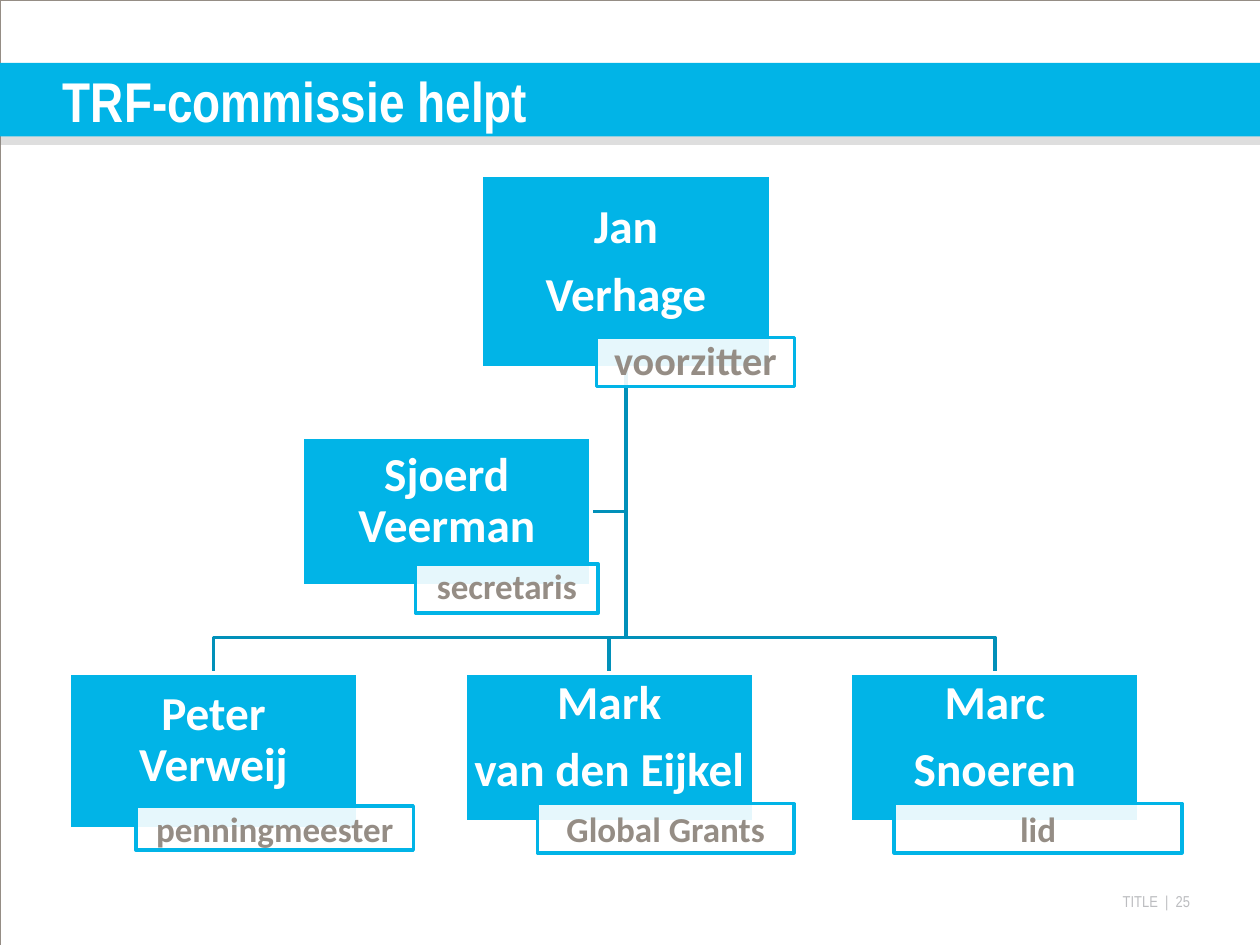
from dataclasses import dataclass

from lxml.etree import SubElement
from pptx import Presentation
from pptx.dml.color import RGBColor
from pptx.enum.shapes import MSO_SHAPE
from pptx.enum.text import MSO_ANCHOR, PP_ALIGN
from pptx.oxml.ns import qn
from pptx.util import Pt


@dataclass(frozen=True)
class Theme:
    blue: str = "01B4E7"
    dark_blue: str = "0190B9"
    taupe: str = "958D85"
    white: str = "FFFFFF"
    shadow: str = "808080"
    footer: str = "BCBDC0"
    heading_font: str = "Arial Narrow"
    body_font: str = "Calibri"
    title_size: float = 32
    name_size: float = 27
    chair_role_size: float = 23
    role_size: float = 20
    footer_size: float = 9
    line_width: float = 2


@dataclass(frozen=True)
class Member:
    name: str  # a new line starts a paragraph, \v breaks a line
    role: str
    name_box: tuple  # left, top, width, height
    role_box: tuple
    role_size: float = Theme.role_size
    role_spacing: float = 1.0

    @property
    def center(self):
        left, top, width, height = self.name_box
        return left + width / 2, top + height / 2


def write_text(shape, text, *, font, size, color, bold=False, align=PP_ALIGN.LEFT,
               anchor=MSO_ANCHOR.MIDDLE, insets=(0, 0, 0, 0), spacing=1.0, gap=0):
    frame = shape.text_frame
    frame.word_wrap = True
    frame.vertical_anchor = anchor
    frame.margin_left, frame.margin_top, frame.margin_right, frame.margin_bottom = map(Pt, insets)
    frame.text = text
    for para in frame.paragraphs:
        para.alignment = align
        para.line_spacing = spacing
        para.space_after = Pt(gap)
        for span in para.runs:
            span.font.name = font
            span.font.size = Pt(size)
            span.font.bold = bold
            span.font.color.rgb = RGBColor.from_string(color)


class Page:
    def __init__(self, slide, theme):
        self.shapes = slide.shapes
        self.theme = theme

    def set_line(self, shape, color, width):
        if color:
            shape.line.color.rgb = RGBColor.from_string(color)
            shape.line.width = Pt(width)
        else:
            shape.line.fill.background()

    def box(self, area, *, fill=None, alpha=None, line=None, width=Theme.line_width):
        box = self.shapes.add_shape(MSO_SHAPE.RECTANGLE, *map(Pt, area))
        box.shadow.inherit = False
        if fill:
            box.fill.solid()
            box.fill.fore_color.rgb = RGBColor.from_string(fill)
        else:
            box.fill.background()
        if alpha:
            color = box.fill._xPr.find(".//" + qn("a:srgbClr"))
            SubElement(color, qn("a:alpha"), val=str(alpha * 1000))
        self.set_line(box, line, width)
        return box

    def drop_shadow(self, box, distance, alpha):
        effects = box.element.spPr.find(qn("a:effectLst"))
        shadow = SubElement(effects, qn("a:outerShdw"), blurRad="0", dist=str(Pt(distance)),
                            dir="5400000", algn="t", rotWithShape="0")
        color = SubElement(shadow, qn("a:srgbClr"), val=self.theme.shadow)
        SubElement(color, qn("a:alpha"), val=str(alpha * 1000))

    def label(self, area, text, **style):
        write_text(self.shapes.add_textbox(*map(Pt, area)), text, **style)

    def branch(self, points):
        start, *rest = [(Pt(x), Pt(y)) for x, y in points]
        builder = self.shapes.build_freeform(*start)
        builder.add_line_segments(rest, close=False)
        line = builder.convert_to_shape()
        line.shadow.inherit = False
        line.fill.background()
        self.set_line(line, self.theme.dark_blue, self.theme.line_width)

    def card(self, member):
        theme = self.theme
        shared = dict(font=theme.body_font, bold=True, align=PP_ALIGN.CENTER)
        name_box = self.box(member.name_box, fill=theme.blue, line=theme.white)
        write_text(name_box, member.name, size=theme.name_size, color=theme.white,
                   insets=(1.4, 1.4, 1.4, 12.4), spacing=0.9, gap=9.45, **shared)
        role_box = self.box(member.role_box, fill=theme.white, alpha=90, line=theme.blue)
        write_text(role_box, member.role, size=member.role_size, color=theme.taupe,
                   insets=(4, 1, 4, 1), spacing=member.role_spacing, **shared)


def main():
    theme = Theme()
    deck = Presentation()
    deck.slide_width, deck.slide_height = Pt(720), Pt(540)
    page = Page(deck.slides.add_slide(deck.slide_layouts[6]), theme)

    # Footer, frame and title band
    page.label((558, 509.8, 122, 11), "TITLE  |  25", font=theme.heading_font,
               size=theme.footer_size, color=theme.footer, align=PP_ALIGN.RIGHT,
               anchor=MSO_ANCHOR.TOP)
    page.box((0, 0, 720, 540), line=theme.taupe, width=0.13)
    band = page.box((-6, 36, 732, 42), fill=theme.blue)
    page.drop_shadow(band, 4.8, 25)
    page.label((36, 36, 648, 42), "TRF-commissie helpt", font=theme.heading_font,
               size=theme.title_size, color=theme.white, bold=True)

    # Committee members
    width, height, row_top = 165, 85, 384.5
    chair = Member("Jan\nVerhage", "voorzitter", (275.2, 100.2, width, 110),
                   (340.8, 192.8, 113.2, 28.2), theme.chair_role_size, 0.9)
    secretary = Member("Sjoerd Veerman", "secretaris", (172.8, 249.8, width, height),
                       (237.4, 322.2, 104.4, 28.2), role_spacing=0.9)
    team = [
        Member("Peter\vVerweij", "penningmeester", (39.5, row_top, width, 89),
               (77.8, 460.6, 158.4, 25.2)),
        Member("Mark\nvan den Eijkel", "Global Grants", (265.6, row_top, width, height),
               (307.2, 459.2, 146.4, 28.2)),
        Member("Marc\nSnoeren", "lid", (486, row_top, width, height),
               (511, 459.2, 164.4, 28.2)),
    ]

    # Branches from the chair
    trunk = chair.center[0]
    start = (trunk, chair.name_box[1] + chair.name_box[3])
    side = secretary.center[1]
    page.branch([start, (trunk, side), (secretary.name_box[0] + width, side)])
    fork = row_top - 20.2
    for member in team:
        end = member.center[0]
        page.branch([start, (trunk, fork), (end, fork), (end, row_top)])

    # Cards over the branches
    for member in [chair, *team, secretary]:
        page.card(member)

    deck.save("out.pptx")


if __name__ == "__main__":
    main()
